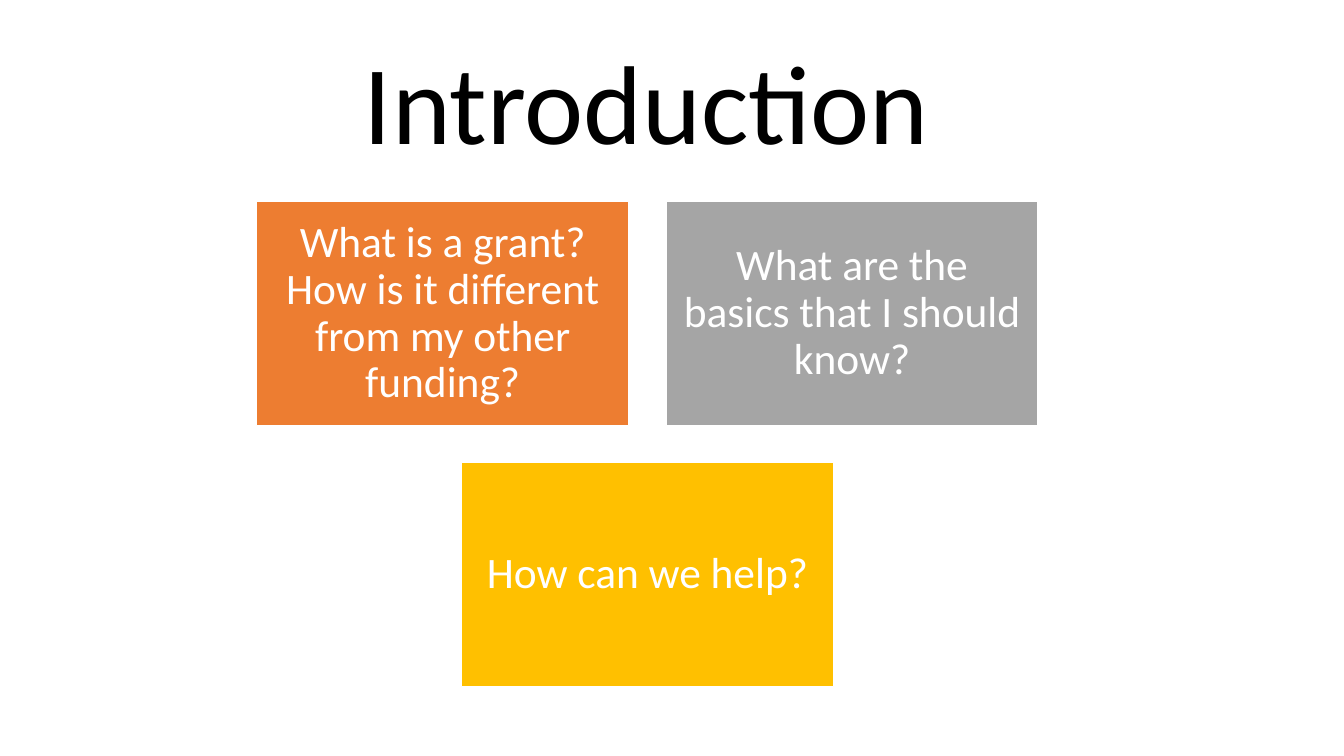
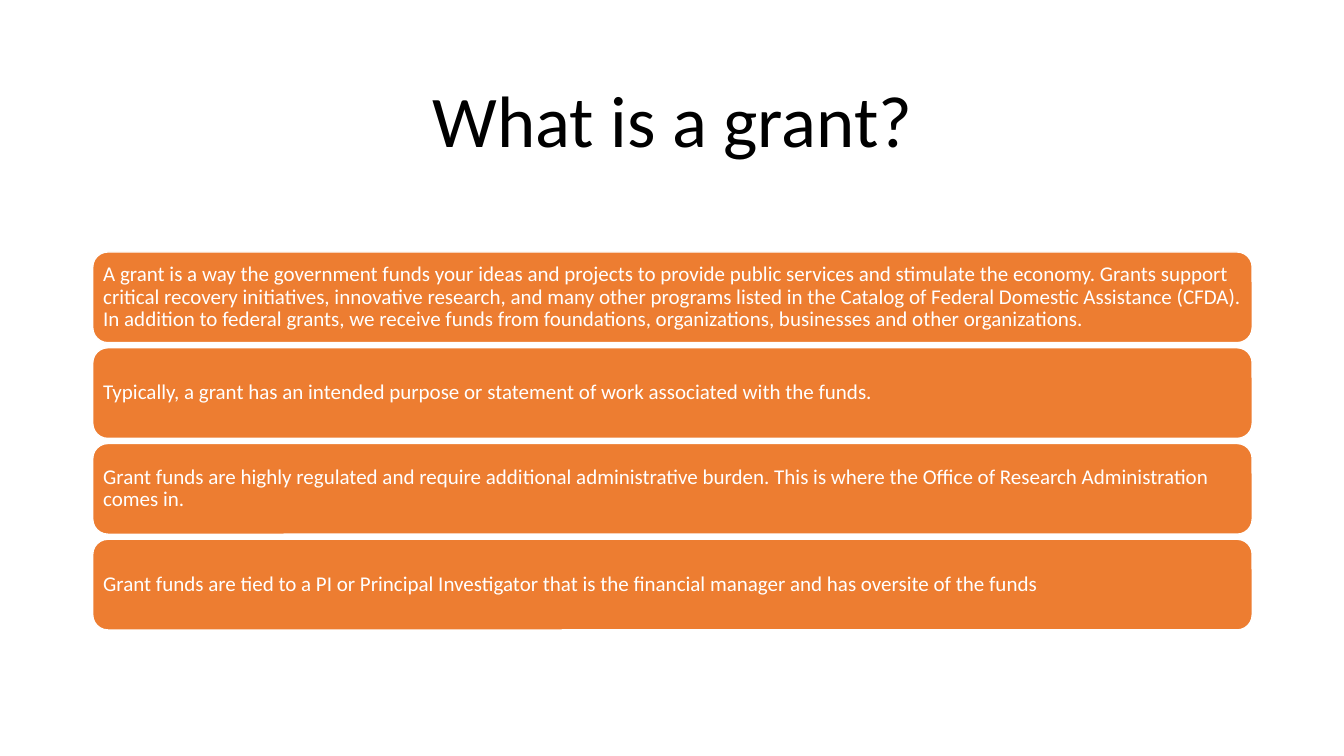
import pptx
import pptx.util
import pptx.dml.color
import pptx.enum.shapes
import pptx.enum.text

Inches = pptx.util.Inches
Pt = pptx.util.Pt
SHAPE = pptx.enum.shapes.MSO_SHAPE
ALIGN = pptx.enum.text.PP_ALIGN
ANCHOR = pptx.enum.text.MSO_ANCHOR

FONT = "Calibri"
COLORS = {
    "title": "000000",
    "white": "FFFFFF",
    "orange": "ED7D31",
    "gray": "A5A5A5",
    "gold": "FFC000",
}

INTRO_TITLE = "Introduction"
QUESTION_ROWS = [
    [
        ("What is a grant? How is it different from my other funding?", "orange"),
        ("What are the basics that I should know?", "gray"),
    ],
    [("How can we help?", "gold")],
]

GRANT_TITLE = "What is a grant?"
GRANT_FACTS = [
    "A grant is a way the government funds your ideas and projects to provide "
    "public services and stimulate the economy. Grants support critical recovery "
    "initiatives, innovative research, and many other programs listed in the "
    "Catalog of Federal Domestic Assistance (CFDA). In addition to federal grants, "
    "we receive funds from foundations, organizations, businesses and other "
    "organizations.",
    "Typically, a grant has an intended purpose or statement of work associated "
    "with the funds.",
    "Grant funds are highly regulated and require additional administrative burden. "
    "This is where the Office of Research Administration comes in.",
    "Grant funds are tied to a PI or Principal Investigator that is the financial "
    "manager and has oversite of the funds",
]


def rgb(name):
    return pptx.dml.color.RGBColor.from_string(COLORS[name])


def set_text(sp, text, size, color, align, inset_x, inset_y):
    tf = sp.text_frame
    tf.word_wrap = True
    tf.vertical_anchor = ANCHOR.MIDDLE
    tf.margin_left = tf.margin_right = Inches(inset_x)
    tf.margin_top = tf.margin_bottom = Inches(inset_y)
    tf.text = text
    p = tf.paragraphs[0]
    p.alignment = align
    p.line_spacing = 0.9
    font = p.runs[0].font
    font.name = FONT
    font.size = Pt(size)
    font.color.rgb = rgb(color)


def add_title(s, text, box, size):
    sp = s.shapes.add_textbox(*map(Inches, box))
    set_text(sp, text, size, "title", ALIGN.CENTER, 0.1, 0.05)


def add_box(s, kind, box, fill, text, size, align, inset):
    sp = s.shapes.add_shape(kind, *map(Inches, box))
    sp.shadow.inherit = False
    sp.fill.solid()
    sp.fill.fore_color.rgb = rgb(fill)
    sp.line.color.rgb = rgb("white")
    sp.line.width = Pt(1)
    set_text(sp, text, size, "white", align, inset, inset)


def build_intro(s):
    add_title(s, INTRO_TITLE, (1.3, 0.42, 10.23, 1.31), 80)
    center, top, width, height, gap = 6.42, 2, 3.69, 2.22, 0.37
    for i, row in enumerate(QUESTION_ROWS):
        left = center - (len(row) * (width + gap) - gap) / 2
        y = top + i * (height + gap)
        for j, (text, fill) in enumerate(row):
            box = (left + j * (width + gap), y, width, height)
            add_box(s, SHAPE.RECTANGLE, box, fill, text, 31, ALIGN.CENTER, 0.13)


def build_grant(s):
    add_title(s, GRANT_TITLE, (0.92, 0.61, 11.5, 1.24), 52)
    top, height, pitch = 2.5, 0.9, 0.95
    for i, text in enumerate(GRANT_FACTS):
        box = (0.92, top + i * pitch, 11.5, height)
        add_box(s, SHAPE.ROUNDED_RECTANGLE, box, "orange", text, 15, ALIGN.LEFT, 0.06)


def main():
    prs = pptx.Presentation()
    prs.slide_width = Inches(13.33)
    prs.slide_height = Inches(7.5)
    for build in (build_intro, build_grant):
        build(prs.slides.add_slide(prs.slide_layouts[6]))
    prs.save("out.pptx")


if __name__ == "__main__":
    main()
